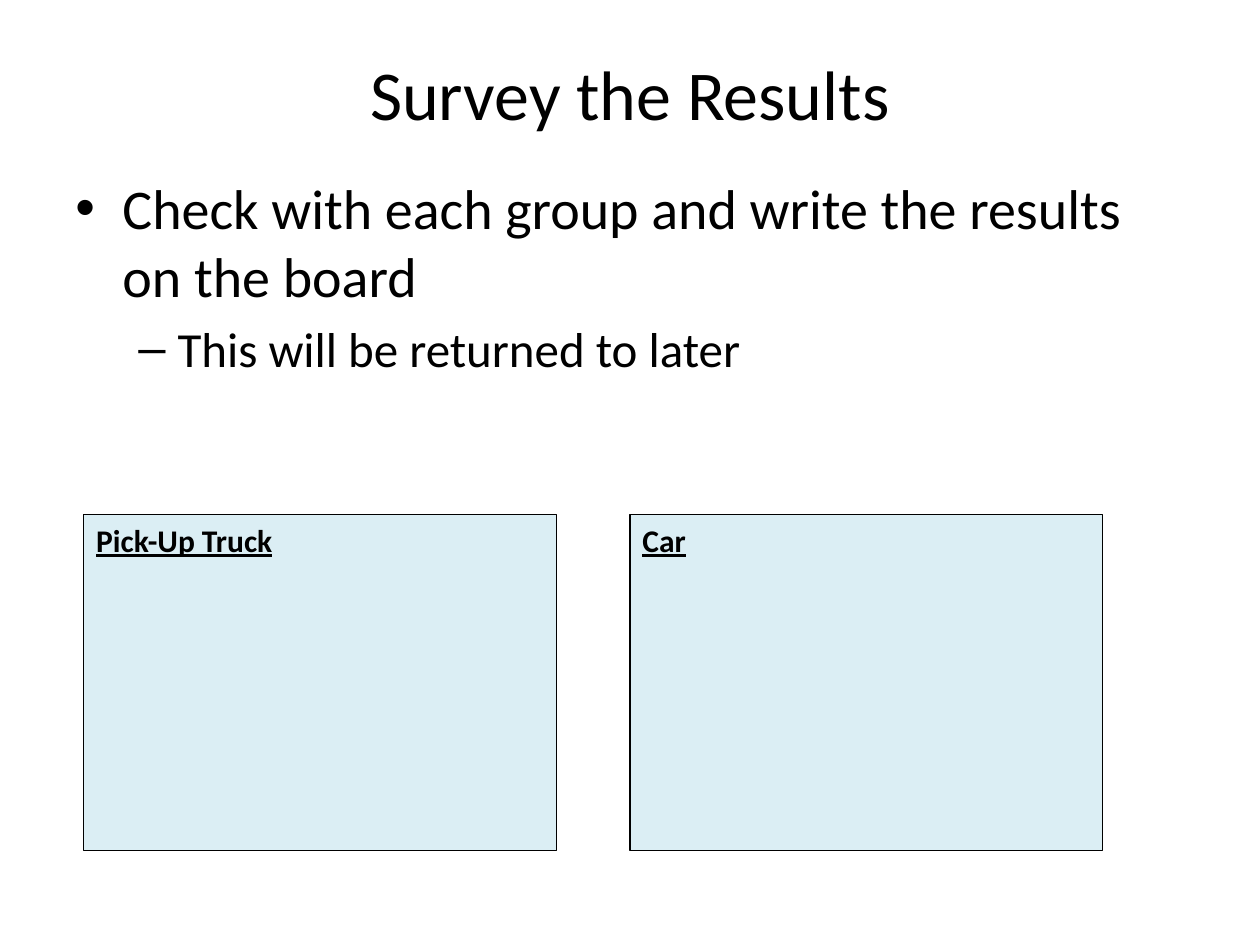
"""Build the Survey the Results slide with its two result boxes."""
from lxml import etree
from pptx import Presentation
from pptx.dml.color import RGBColor
from pptx.enum.shapes import MSO_SHAPE as SHAPE
from pptx.enum.text import MSO_ANCHOR as ANCHOR, PP_ALIGN as ALIGN
from pptx.oxml.ns import qn
from pptx.util import Cm, Pt

COLORS = {"text": "000000", "box": "DBEEF4", "line": "000000"}


def add_text(p, text, size=18, bold=None, underline=None, align=ALIGN.LEFT,
             level=0, bullet=None, margin=0, hang=0, before=0):
    p.alignment = align
    p.level = level
    p.space_before = Pt(before)
    if bullet:
        pPr = p._p.get_or_add_pPr()
        pPr.set("marL", str(Cm(margin)))
        pPr.set("indent", str(-Cm(hang)))
        etree.SubElement(pPr, qn("a:buFont")).set("typeface", "Arial")
        etree.SubElement(pPr, qn("a:buChar")).set("char", bullet)
    r = p.add_run()
    r.text = text
    r.font.name = "Calibri"
    r.font.size = Pt(size)
    r.font.bold = bold
    r.font.underline = underline
    r.font.color.rgb = RGBColor.from_string(COLORS["text"])


prs = Presentation()
prs.slide_width, prs.slide_height = Cm(25.4), Cm(19.05)
s = prs.slides.add_slide(prs.slide_layouts[6])

title = s.shapes.add_textbox(Cm(1.27), Cm(0.76), Cm(22.86), Cm(2.21))
tf = title.text_frame
tf.word_wrap = True
tf.vertical_anchor = ANCHOR.MIDDLE
add_text(tf.paragraphs[0], "Survey the Results", size=40, align=ALIGN.CENTER)

body = s.shapes.add_textbox(Cm(1.27), Cm(3.38), Cm(22.86), Cm(14.4))
tf = body.text_frame
tf.word_wrap = True
add_text(tf.paragraphs[0], "Check with each group and write the results on the board",
         size=32, bullet="•", margin=0.95, hang=0.95, before=6.4)
add_text(tf.add_paragraph(), "This will be returned to later",
         size=28, level=1, bullet="–", margin=2.06, hang=0.79, before=5.6)

for i, label in enumerate(["Pick-Up Truck", "Car"]):
    sp = s.shapes.add_shape(SHAPE.RECTANGLE, Cm(1.69 + 11.01 * i), Cm(10.37), Cm(9.53), Cm(6.77))
    sp.shadow.inherit = False
    sp.fill.solid()
    sp.fill.fore_color.rgb = RGBColor.from_string(COLORS["box"])
    sp.line.color.rgb = RGBColor.from_string(COLORS["line"])
    sp.line.width = Pt(0.75)
    tf = sp.text_frame
    tf.word_wrap = True
    tf.vertical_anchor = ANCHOR.TOP
    add_text(tf.paragraphs[0], label, bold=True, underline=True)

prs.save("out.pptx")
